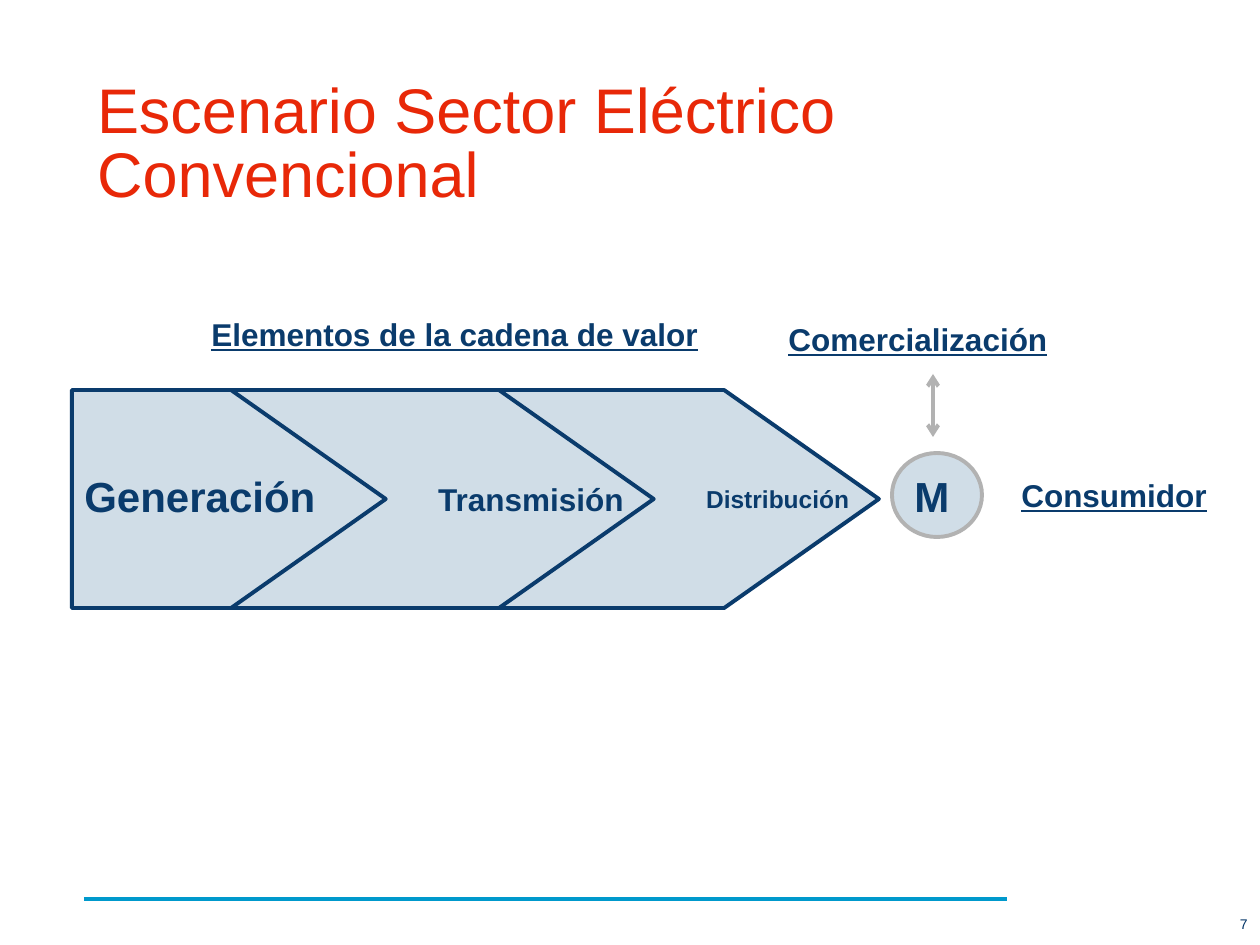
from dataclasses import dataclass

from lxml import etree
from pptx import Presentation
from pptx.dml.color import RGBColor
from pptx.enum.shapes import MSO_CONNECTOR, MSO_SHAPE
from pptx.enum.text import MSO_ANCHOR, MSO_AUTO_SIZE, PP_ALIGN
from pptx.oxml.ns import qn
from pptx.util import Pt

PX_PER_INCH = 126
EMU_PER_INCH = 914400
STRAIGHT = MSO_CONNECTOR.STRAIGHT
PENTAGON, CHEVRON, ELLIPSE = MSO_SHAPE.PENTAGON, MSO_SHAPE.CHEVRON, MSO_SHAPE.OVAL
TOP, MIDDLE = MSO_ANCHOR.TOP, MSO_ANCHOR.MIDDLE
LEFT, RIGHT = PP_ALIGN.LEFT, PP_ALIGN.RIGHT
FIXED, GROW = MSO_AUTO_SIZE.NONE, MSO_AUTO_SIZE.SHAPE_TO_FIT_TEXT


@dataclass(frozen=True)
class Theme:
    """Colours, font and type sizes of the slide."""
    font: str = "Arial"
    title: str = "E82808"
    navy: str = "0A3B6C"
    number: str = "003366"
    pale: str = "D0DDE7"
    grey: str = "B2B2B2"
    rule: str = "0099CC"
    stroke: float = 2.25
    title_size: int = 36
    title_leading: float = 36.5
    large: int = 24
    medium: int = 18
    small: int = 14
    tiny: int = 8


def px(length):
    """Turn pixels into EMU."""
    return round(length * EMU_PER_INCH / PX_PER_INCH)


def assign(target, values):
    """Set attributes of an object from a dict."""
    for name, value in values.items():
        setattr(target, name, value)


class SlideBuilder:
    """Draws styled elements on the current slide."""

    def __init__(self, page, theme):
        """Keep the slide and its theme."""
        self.page = page
        self.theme = theme

    def add_text(self, shape, text, size, color, bold=False, underline=None, frame=None, para=None):
        """Put one formatted paragraph in a shape and return it."""
        assign(shape.text_frame, {"word_wrap": False, "auto_size": FIXED} | (frame or {}))
        paragraph = shape.text_frame.paragraphs[0]
        assign(paragraph, {"alignment": LEFT} | (para or {}))
        span = paragraph.add_run()
        span.text = text
        assign(span.font, {"name": self.theme.font, "size": Pt(size), "bold": bold, "underline": underline})
        span.font.color.rgb = RGBColor.from_string(color)
        return paragraph

    def stroke(self, line, color):
        """Give a line its colour and the common width."""
        line.color.rgb = RGBColor.from_string(color)
        line.width = Pt(self.theme.stroke)

    def title(self, text, left, top, width, height):
        """Place and fill the title placeholder."""
        box = self.page.shapes.title
        assign(box, {"left": px(left), "top": px(top), "width": px(width), "height": px(height)})
        frame = {"word_wrap": True, "vertical_anchor": TOP, "margin_left": px(4),
                 "margin_right": px(4), "margin_top": px(9), "margin_bottom": px(9)}
        self.add_text(box, text, self.theme.title_size, self.theme.title, frame=frame,
                      para={"line_spacing": Pt(self.theme.title_leading)})

    def label(self, text, left, top, width, height, size, underline=True):
        """Add a bold text box that grows with its text."""
        box = self.page.shapes.add_textbox(px(left), px(top), px(width), px(height))
        self.add_text(box, text, size, self.theme.navy, bold=True, underline=underline, frame={"auto_size": GROW})

    def page_number(self, text, left, top, width, height):
        """Add the page number."""
        box = self.page.shapes.add_textbox(px(left), px(top), px(width), px(height))
        self.add_text(box, text, self.theme.tiny, self.theme.number,
                      frame={"vertical_anchor": MIDDLE}, para={"alignment": RIGHT})

    def shape(self, kind, left, top, width, height, color):
        """Add a pale preset shape with a coloured outline."""
        shape = self.page.shapes.add_shape(kind, px(left), px(top), px(width), px(height))
        shape.shadow.inherit = False
        shape.fill.solid()
        shape.fill.fore_color.rgb = RGBColor.from_string(self.theme.pale)
        self.stroke(shape.line, color)
        return shape

    def stage(self, text, kind, left, width, point, size, spacing, indents):
        """Add one link of the value chain."""
        shape = self.shape(kind, left, 390, width, 218, self.theme.navy)
        shape.adjustments[0] = point
        paragraph = self.add_text(shape, text, size, self.theme.navy, bold=True,
                                  frame={"vertical_anchor": MIDDLE}, para={"line_spacing": spacing})
        properties = paragraph._p.get_or_add_pPr()
        for name, length in zip(("marL", "indent"), indents):
            properties.set(name, str(px(length)))

    def line(self, start, end, color, arrows=False):
        """Add a straight line, with arrowheads at both ends if asked."""
        line = self.page.shapes.add_connector(STRAIGHT, *map(px, start + end))
        self.stroke(line.line, color)
        if arrows:
            outline = line.line._get_or_add_ln()
            for name in ("a:headEnd", "a:tailEnd"):
                etree.SubElement(outline, qn(name), type="arrow")
        etree.SubElement(line._element.spPr, qn("a:effectLst"))


def main():
    """Build and save the slide."""
    deck = Presentation()
    assign(deck, {"slide_width": px(1260), "slide_height": px(945)})
    theme = Theme()
    slide = SlideBuilder(deck.slides.add_slide(deck.slide_layouts[5]), theme)
    slide.line((84, 899), (1007, 899), theme.rule)
    slide.title("Escenario Sector Eléctrico Convencional", 93, 73, 1077, 126)
    slide.page_number("7", 999, 902, 261, 43)
    stages = (
        ("Generación", PENTAGON, 72, 355, 0.66, theme.large, 0.9, (0, 0)),
        ("Transmisión", CHEVRON, 231, 424, 0.71, theme.medium, 1.0, (0, 40)),
        ("Distribución", CHEVRON, 499, 380, 0.71, theme.small, 1.0, (40, 0)),
    )
    for stage in stages:
        slide.stage(*stage)
    slide.label("Elementos de la cadena de valor", 199, 309, 517, 50, theme.medium)
    slide.shape(ELLIPSE, 892, 453, 90, 84, theme.grey)
    slide.label("M", 902, 464, 60, 63, theme.large, underline=None)
    slide.line((933, 374), (933, 437), theme.grey, arrows=True)
    slide.label("Comercialización", 776, 314, 287, 50, theme.medium)
    slide.label("Consumidor", 1009, 470, 213, 50, theme.medium)
    deck.save("out.pptx")


if __name__ == "__main__":
    main()
